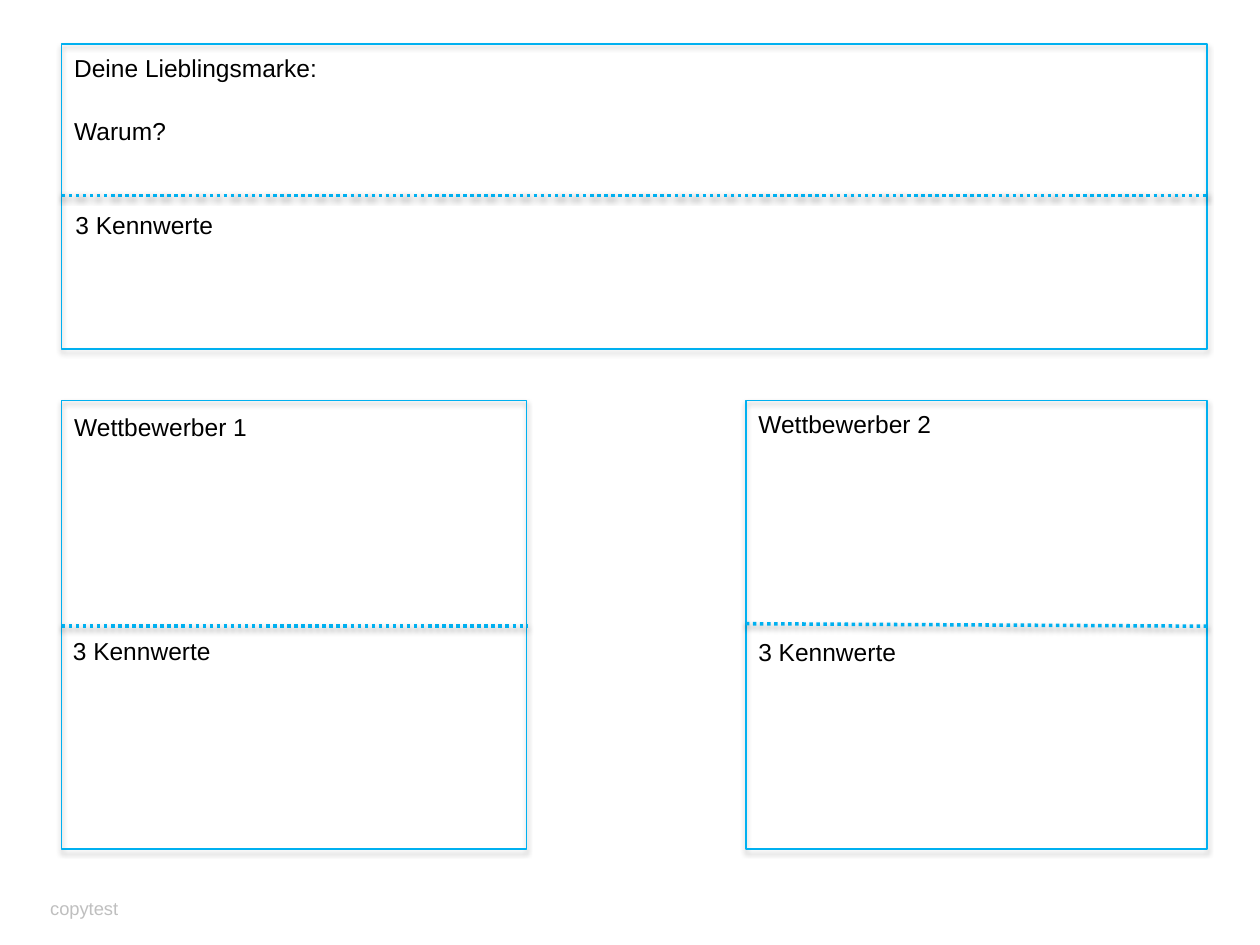
from lxml import etree
from pptx import Presentation, util as u
from pptx.dml.color import RGBColor
from pptx.enum import dml, shapes, text
from pptx.oxml.ns import qn

LEFT, RIGHT = 0.49, 9.58
RIGHT_BOX = 5.92
LOWER_TOP, LOWER_HEIGHT = 3.18, 3.56
CYAN = "00B0F0"
LABEL = {"name": "Arial", "size": u.Pt(14)}
FOOTER = {"name": "Arial", "size": u.Pt(10.5)}


def color(value):
    return RGBColor.from_string(value)


def add_shadow(shape, opacity, distance):
    """Give a shape a soft shadow that falls straight down."""
    effects = etree.SubElement(shape.element.spPr, qn("a:effectLst"))
    shadow = etree.SubElement(effects, qn("a:outerShdw"), {
        "blurRad": str(u.Pt(3.1)), "dist": str(u.Pt(distance)),
        "dir": "5400000", "rotWithShape": "0"})
    black = etree.SubElement(shadow, qn("a:srgbClr"), val="000000")
    etree.SubElement(black, qn("a:alpha"), val=str(opacity * 1000))


def add_frame(slide, left, top, right, height):
    frame = slide.shapes.add_shape(
        shapes.MSO_SHAPE.RECTANGLE, u.Inches(left), u.Inches(top),
        u.Inches(right - left), u.Inches(height))
    frame.fill.background()
    frame.line.color.rgb = color(CYAN)
    frame.line.width = u.Pt(0.75)
    add_shadow(frame, 35, 1.8)


def add_divider(slide, start, end):
    divider = slide.shapes.add_connector(
        shapes.MSO_CONNECTOR.STRAIGHT, *map(u.Inches, start + end))
    divider.line.color.rgb = color(CYAN)
    divider.line.width = u.Pt(2)
    divider.line.dash_style = dml.MSO_LINE.ROUND_DOT
    add_shadow(divider, 38, 1.6)


def add_text(slide, wording, left, top, width, height=0.34,
             font=LABEL, ink="000000", wrap=False):
    box = slide.shapes.add_textbox(*map(u.Inches, (left, top, width, height)))
    frame = box.text_frame
    frame.word_wrap = wrap
    frame.auto_size = (text.MSO_AUTO_SIZE.NONE if wrap
                       else text.MSO_AUTO_SIZE.SHAPE_TO_FIT_TEXT)
    run = frame.paragraphs[0].add_run()
    run.text = wording
    for key, value in font.items():
        setattr(run.font, key, value)
    run.font.color.rgb = color(ink)


def main():
    deck = Presentation()
    deck.slide_width, deck.slide_height = u.Inches(10), u.Inches(7.5)
    slide = deck.slides.add_slide(deck.slide_layouts[6])

    add_text(slide, "copytest", 0.3, 7.07, 2.38, 0.4, FOOTER, "BFBFBF", True)

    add_frame(slide, LEFT, 0.35, RIGHT, 2.42)
    add_divider(slide, (LEFT, 1.55), (RIGHT, 1.55))
    add_text(slide, "Deine Lieblingsmarke:", LEFT, 0.37, 2.14)
    add_text(slide, "Warum?", LEFT, 0.87, 0.93)
    add_text(slide, "3 Kennwerte", 0.5, 1.62, 1.36)

    add_frame(slide, LEFT, LOWER_TOP, 4.18, LOWER_HEIGHT)
    add_divider(slide, (LEFT, 4.97), (4.19, 4.97))
    add_text(slide, "Wettbewerber 1", LEFT, 3.22, 1.58)
    add_text(slide, "3 Kennwerte", 0.48, 5, 1.3)

    add_frame(slide, RIGHT_BOX, LOWER_TOP, RIGHT, LOWER_HEIGHT)
    add_divider(slide, (RIGHT_BOX, 4.95), (RIGHT, 4.97))
    add_text(slide, "Wettbewerber 2", RIGHT_BOX, 3.2, 1.58)
    add_text(slide, "3 Kennwerte", RIGHT_BOX, 5.01, 1.3)

    deck.save("out.pptx")


if __name__ == "__main__":
    main()
